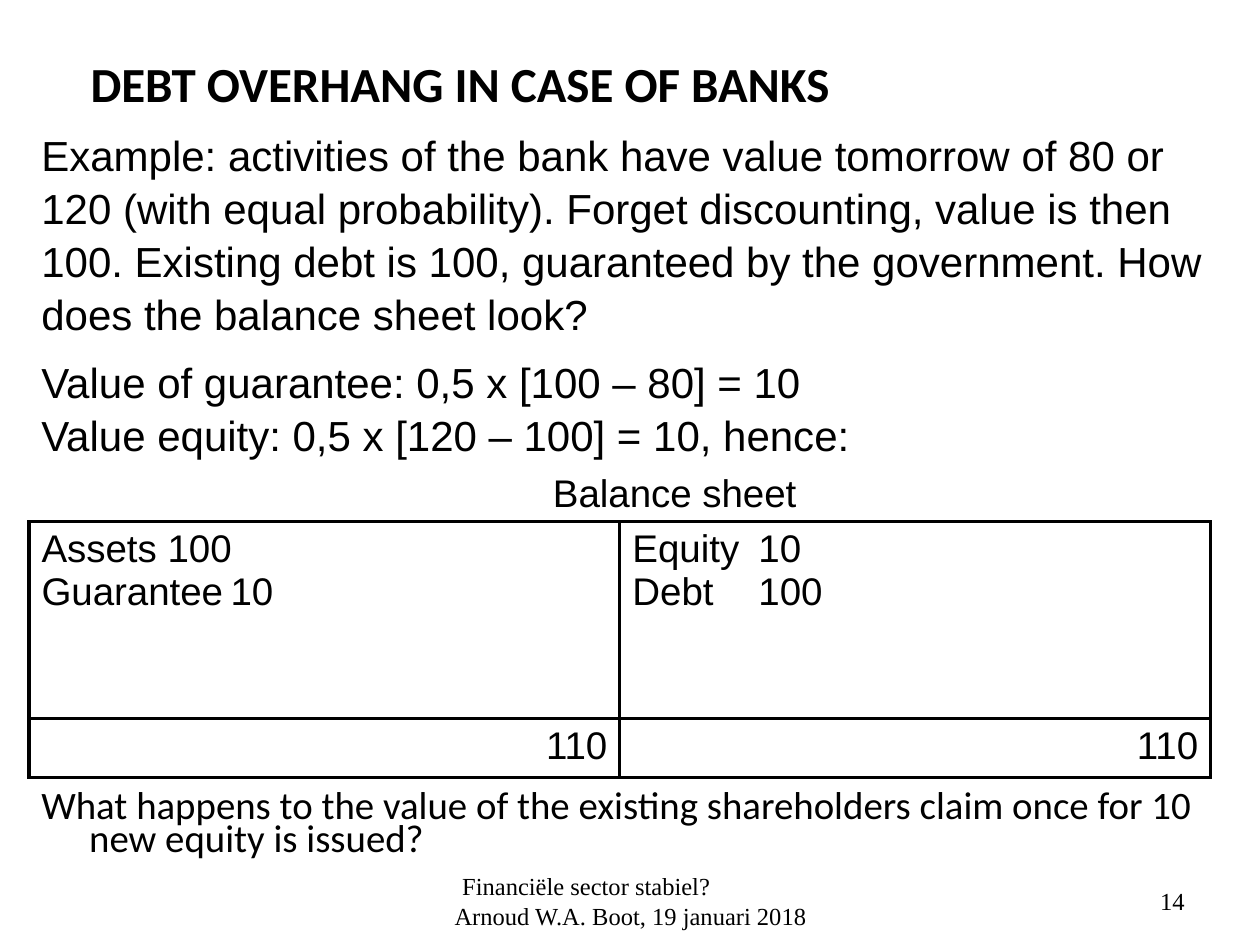
from dataclasses import dataclass

from lxml.etree import SubElement
from pptx import Presentation
from pptx.dml.color import RGBColor
from pptx.enum.text import MSO_ANCHOR, PP_ALIGN
from pptx.oxml.ns import qn
from pptx.util import Inches, Pt

# Grid of 100 columns and 75 rows over the slide
WIDTH, HEIGHT = Inches(10), Inches(7.5)
COL, ROW = WIDTH / 100, HEIGHT / 75


@dataclass(frozen=True)
class Theme:
    ink: str = "000000"
    heading: str = "Calibri"
    body: str = "Arial"
    footer: str = "Times New Roman"
    title_size: float = 28
    text_size: float = 24
    table_size: float = 22
    question_size: float = 22.2
    footer_size: float = 14
    border: float = 2


THEME = Theme()


def place(left, top, width, height):
    """Turn grid columns and rows into slide lengths."""
    return int(left * COL), int(top * ROW), int(width * COL), int(height * ROW)


def write(tf, lines, font, size, bold=False, **formats):
    """Write one paragraph per line, each with the same format values."""
    for i, line in enumerate(lines):
        p = tf.paragraphs[0] if i == 0 else tf.add_paragraph()
        for name, value in formats.items():
            setattr(p, name, value)
        r = p.add_run()
        r.text = line
        for name, value in dict(name=font, size=Pt(size), bold=bold).items():
            setattr(r.font, name, value)
        r.font.color.rgb = RGBColor.from_string(THEME.ink)
    return tf.paragraphs


def add_box(s, box, anchor=MSO_ANCHOR.TOP, wrap=True):
    tf = s.shapes.add_textbox(*place(*box)).text_frame
    tf.word_wrap = wrap
    tf.vertical_anchor = anchor
    return tf


def add_title(s, box, text):
    tf = add_box(s, box, MSO_ANCHOR.MIDDLE)
    write(tf, [text], THEME.heading, THEME.title_size, bold=True)


def add_example(s, box, lines):
    tf = add_box(s, box, MSO_ANCHOR.MIDDLE)
    paragraphs = write(tf, lines, THEME.body, THEME.text_size, line_spacing=1.05)
    paragraphs[1].space_before = Pt(9)


def add_caption(s, box, text):
    write(add_box(s, box, wrap=False), [text], THEME.body, THEME.table_size)


def add_borders(cell):
    tc_pr = cell._tc.get_or_add_tcPr()
    for side in ("lnL", "lnR", "lnT", "lnB"):
        ln = SubElement(tc_pr, qn(f"a:{side}"), w=str(Pt(THEME.border)))
        fill = SubElement(ln, qn("a:solidFill"))
        SubElement(fill, qn("a:srgbClr"), val=THEME.ink)


def add_balance_sheet(s, box, rows, shares):
    left, top, width, height = place(*box)
    table = s.shapes.add_table(len(rows), len(rows[0]), left, top, width, height).table
    table.first_row = table.horz_banding = False
    for column in table.columns:
        column.width = width // len(rows[0])
    alignments = (PP_ALIGN.LEFT, PP_ALIGN.RIGHT)
    for i, (entries, share, align) in enumerate(zip(rows, shares, alignments)):
        table.rows[i].height = int(height * share)
        for j, lines in enumerate(entries):
            cell = table.cell(i, j)
            add_borders(cell)
            cell.fill.background()
            write(cell.text_frame, lines, THEME.body, THEME.table_size, alignment=align)


def add_question(s, box, text):
    p = write(add_box(s, box), [text], THEME.heading, THEME.question_size,
              line_spacing=0.7, space_before=Pt(4.4))[0]
    # Hanging indent
    indent = Inches(0.38)
    p_pr = p._p.get_or_add_pPr()
    p_pr.set("marL", str(indent))
    p_pr.set("indent", str(-indent))


def add_footer(s, box, number_box, lines, number):
    style = THEME.footer, THEME.footer_size
    tf = add_box(s, box, MSO_ANCHOR.MIDDLE)
    first = write(tf, lines, *style, alignment=PP_ALIGN.CENTER)[0]
    # The first line starts just inside the second
    first.alignment = PP_ALIGN.LEFT
    first._p.get_or_add_pPr().set("marL", str(Inches(0.15)))
    tf = add_box(s, number_box, MSO_ANCHOR.MIDDLE)
    write(tf, [number], *style, alignment=PP_ALIGN.RIGHT)


def main():
    prs = Presentation()
    prs.slide_width, prs.slide_height = WIDTH, HEIGHT
    s = prs.slides.add_slide(prs.slide_layouts[6])

    # Title and worked example
    add_title(s, (6.2, 2.3, 91.8, 8.6), "DEBT OVERHANG IN CASE OF BANKS")
    add_example(s, (2.3, 10, 94.5, 26.6), [
        "Example: activities of the bank have value tomorrow of 80 or 120 "
        "(with equal probability). Forget discounting, value is then 100. "
        "Existing debt is 100, guaranteed by the government. "
        "How does the balance sheet look?",
        "Value of guarantee: 0,5 x [100 – 80] = 10",
        "Value equity: 0,5 x [120 – 100] = 10, hence:",
    ])

    # Balance sheet
    add_caption(s, (42.9, 36.7, 21.6, 4.7), "Balance sheet")
    add_balance_sheet(s, (2.3, 41.4, 93.8, 20.3), [
        [["Assets\t100", "Guarantee\t10"], ["Equity\t10", "Debt\t100"]],
        [["110"], ["110"]],
    ], shares=(0.77, 0.23))

    # Question and footer
    add_question(s, (2.3, 62.5, 95.3, 6.2),
                 "What happens to the value of the existing shareholders claim "
                 "once for 10 new equity is issued?")
    add_footer(s, (34.2, 69.5, 31.7, 4), (71.7, 69.5, 23.3, 4),
               ["Financiële sector stabiel?", "Arnoud W.A. Boot, 19 januari 2018"], "14")
    prs.save("out.pptx")


if __name__ == "__main__":
    main()
